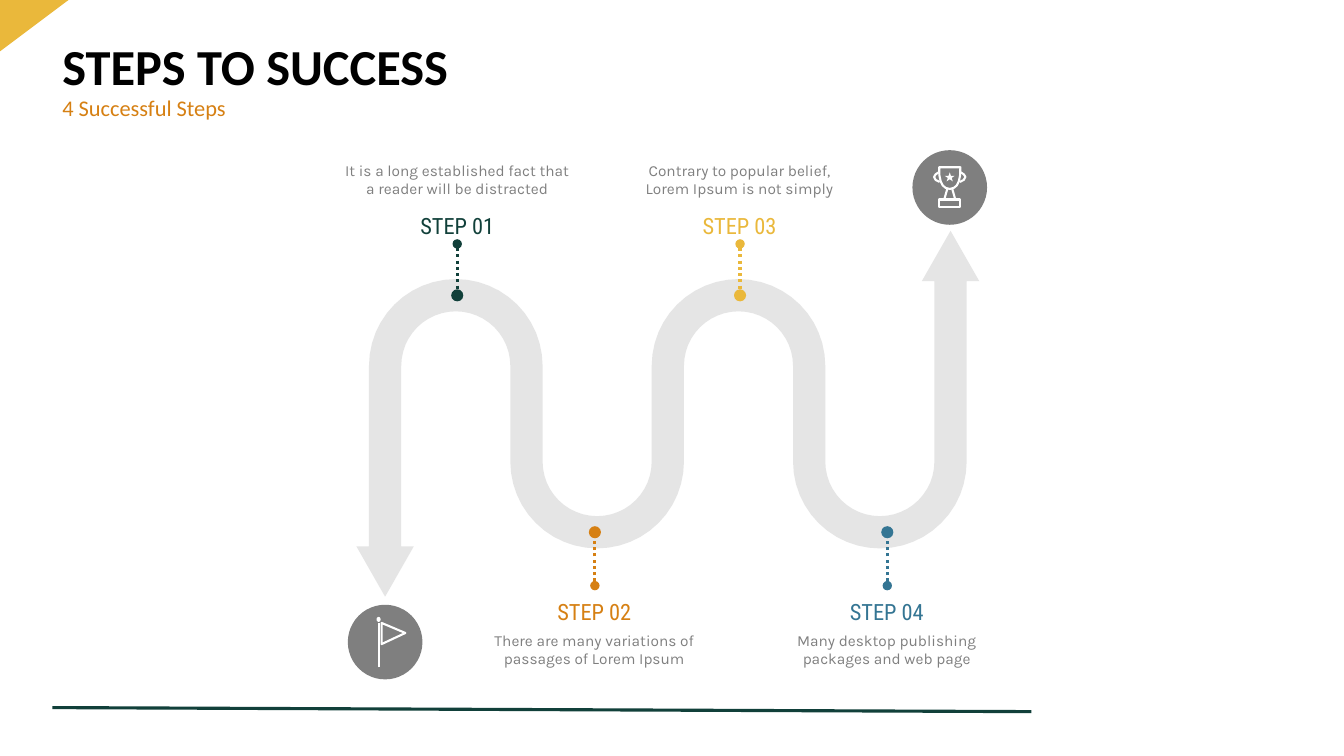
import math

import pptx
import pptx.dml.color
import pptx.enum.dml
import pptx.enum.shapes
import pptx.enum.text
import pptx.oxml.ns
import pptx.util
from lxml import etree

SHAPE = pptx.enum.shapes.MSO_SHAPE
ANCHOR = pptx.enum.text.MSO_ANCHOR
ALIGN = pptx.enum.text.PP_ALIGN
DASH = pptx.enum.dml.MSO_LINE

GREEN, YELLOW, ORANGE, BLUE = "11403A", "EAB83B", "D68013", "347593"
GRAY, ROAD, WHITE, BLACK = "7F7F7F", "E5E5E5", "FFFFFF", "000000"


def rgb(value):
    return pptx.dml.color.RGBColor.from_string(value)


def cells(n):
    return pptx.util.Inches(n / 10)


class Canvas:
    title_font, label_font, body_font = "Calibri", "Roboto Condensed", "Karla"

    def __init__(self, slide):
        self.s = slide

    def text(self, box, words, font, size, color, bold=False, align=ALIGN.LEFT,
             anchor=ANCHOR.TOP, top=0.5, spacing=1.0):
        tf = self.s.shapes.add_textbox(*map(cells, box)).text_frame
        tf.word_wrap = True
        tf.vertical_anchor = anchor
        tf.margin_top = cells(top)
        p = tf.paragraphs[0]
        p.alignment = align
        p.line_spacing = spacing
        for i, line in enumerate(words.split("\n")):
            if i:
                p.add_line_break()
            r = p.add_run()
            r.text = line
            r.font.name, r.font.size, r.font.bold = font, pptx.util.Pt(size), bold
            r.font.color.rgb = rgb(color)

    def paint(self, sp, fill, line, width=1.5):
        sp.shadow.inherit = False
        if fill:
            sp.fill.solid()
            sp.fill.fore_color.rgb = rgb(fill)
        else:
            sp.fill.background()
        if line:
            sp.line.color.rgb = rgb(line)
            sp.line.width = pptx.util.Pt(width)
        else:
            sp.line.fill.background()
        return sp

    def shape(self, kind, box, fill=None, line=None):
        sp = self.s.shapes.add_shape(kind, *map(cells, box))
        return self.paint(sp, fill, line)

    def outline(self, points, fill=None, line=None, close=True):
        first, *rest = [(cells(x), cells(y)) for x, y in points]
        builder = self.s.shapes.build_freeform(*first, scale=1.0)
        builder.add_line_segments(rest, close=close)
        return self.paint(builder.convert_to_shape(), fill, line)

    def line(self, start, end, color, width, dotted=False):
        sp = self.s.shapes.add_connector(
            pptx.enum.shapes.MSO_CONNECTOR.STRAIGHT, *map(cells, start + end))
        sp.line.color.rgb = rgb(color)
        sp.line.width = pptx.util.Pt(width)
        if dotted:
            sp.line.dash_style = DASH.ROUND_DOT
            ln = sp.line._get_or_add_ln()
            etree.SubElement(ln, pptx.oxml.ns.qn("a:headEnd"), type="oval")
        etree.SubElement(sp._element.spPr, pptx.oxml.ns.qn("a:effectLst"))

    def road(self, left, step, bends, top, bottom, half, start, finish):
        def side(offset):
            points = []
            for i in range(bends):
                sign = -1 if i % 2 == 0 else 1
                r = step / 2 - sign * offset
                cx = left + step * (i + 0.5)
                cy = top if i % 2 == 0 else bottom
                for k in range(25):
                    t = math.pi * k / 24
                    points.append((cx - r * math.cos(t), cy + sign * r * math.sin(t)))
            return points

        def head(x, y, way):
            return [(x - way * dx, y + way * dy) for dx, dy in
                    [(half, 0), (2.85, 0), (0, -5), (-2.85, 0), (-half, 0)]]

        up = head(left + step * bends, finish, 1)
        down = head(left, start, -1)
        self.outline(side(half) + up + side(-half)[::-1] + down, ROAD)

    def step(self, name, words, left, x, color, above):
        label = (left, 20.5, 24.9, 3.7) if above else (left, 58.1, 24.9, 4.4)
        body = (left, 15.4 if above else 62.1, 24.9, 4.7)
        anchor = ANCHOR.BOTTOM if above else ANCHOR.TOP
        self.text(body, words, self.body_font, 11, GRAY, align=ALIGN.CENTER, anchor=anchor)
        self.text(label, name, self.label_font, 16, color, align=ALIGN.CENTER,
                  anchor=anchor, top=0.5 if above else 1.2)
        self.shape(SHAPE.OVAL, (x - 0.6, 28.7 if above else 52.2, 1.2, 1.2), color)
        ends = (24.2, 28.7) if above else (58.1, 53.4)
        self.line((x, ends[0]), (x, ends[1]), color, 2.25, dotted=True)

    def trophy(self, x, y):
        def at(points):
            return [(x + dx, y + dy) for dx, dy in points]

        self.shape(SHAPE.OVAL, (x - 3.7, y - 3.7, 7.4, 7.4), GRAY)
        cup = [(-1.05, -2), (-1.03, -1.2), (-0.9, -0.6), (-0.7, -0.2), (-0.4, 0.05), (0, 0.15)]
        mirrored = [(-dx, dy) for dx, dy in cup[-2::-1]]
        self.outline(at(cup + mirrored), line=WHITE)
        handle = [(1.1, -1.5), (1.4, -1.3), (1.55, -1.05), (1.4, -0.75), (1, -0.55)]
        for way in (-1, 1):
            self.outline(at([(way * dx, dy) for dx, dy in handle]), line=WHITE, close=False)
            self.line((x + way * 0.25, y + 0.15), (x + way * 0.55, y + 1.2), WHITE, 1.5)
        self.shape(SHAPE.RECTANGLE, (x - 1.05, y + 1.2, 2.1, 0.7), line=WHITE)
        self.shape(SHAPE.STAR_5_POINT, (x - 0.5, y - 1.5, 1, 0.9), WHITE)

    def flag(self, x, y):
        self.shape(SHAPE.OVAL, (x - 3.7, y - 3.7, 7.4, 7.4), GRAY)
        self.outline([(x - 0.35, y - 1.9), (x + 2, y - 0.9), (x - 0.35, y + 0.2)], line=WHITE)
        self.line((x - 0.65, y + 2.5), (x - 0.65, y - 1.9), WHITE, 1.5)
        self.shape(SHAPE.OVAL, (x - 0.85, y - 2.5, 0.4, 0.5), WHITE)


def main():
    prs = pptx.Presentation()
    prs.slide_width, prs.slide_height = pptx.util.Inches(13.33), pptx.util.Inches(7.5)
    c = Canvas(prs.slides.add_slide(prs.slide_layouts[6]))

    c.line((5.2, 70.2), (102.3, 70.6), GREEN, 2.25)
    corner = c.shape(SHAPE.RIGHT_TRIANGLE, (0, 0, 6.8, 5.1), YELLOW)
    corner._element.spPr.xfrm.set("flipV", "1")
    c.text((5.2, 3.9, 122.9, 6), "STEPS TO SUCCESS", c.title_font, 36, BLACK,
           bold=True, anchor=ANCHOR.MIDDLE, spacing=0.9)
    c.text((5.2, 8.9, 122.9, 3.9), "4 Successful Steps", c.title_font, 16, ORANGE,
           anchor=ANCHOR.MIDDLE, spacing=0.9)

    c.road(left=38.2, step=14.02, bends=4, top=36.3, bottom=45.8,
           half=1.6, start=54.2, finish=27.9)
    steps = [
        ("It is a long established fact that a reader will be distracted", 32.9, 45.35, GREEN),
        ("There are many variations of passages of Lorem Ipsum", 46.5, 59, ORANGE),
        ("Contrary to popular belief,\nLorem Ipsum is not simply", 60.9, 73.4, YELLOW),
        ("Many desktop publishing packages and web page", 75.5, 88, BLUE),
    ]
    for i, (words, left, x, color) in enumerate(steps):
        c.step(f"STEP {i + 1:02}", words, left, x, color, above=i % 2 == 0)
    c.trophy(94.2, 18.6)
    c.flag(38.2, 63.7)
    prs.save("out.pptx")


if __name__ == "__main__":
    main()
